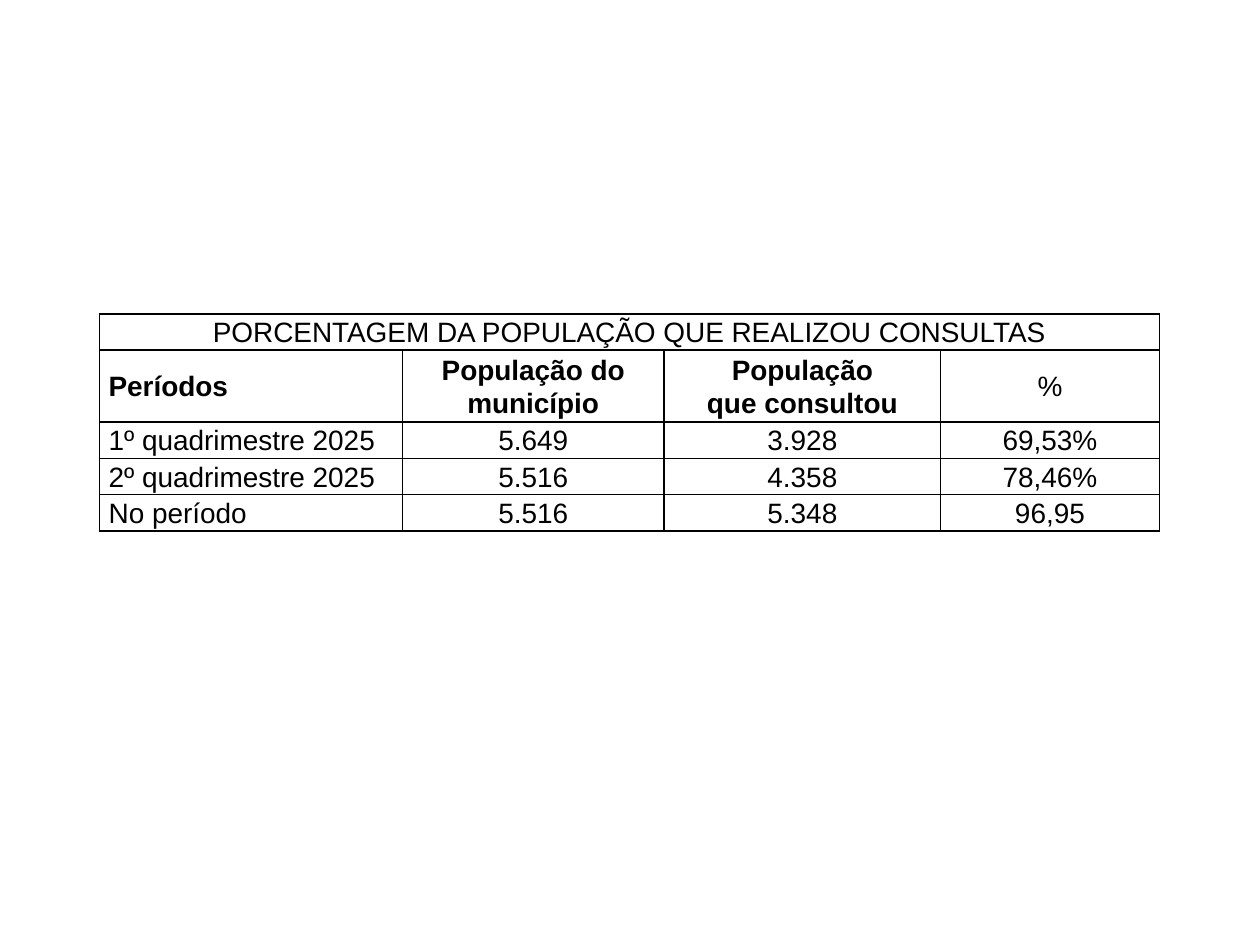
from pptx import Presentation
from pptx.dml.color import RGBColor
from pptx.enum import text
from pptx.oxml import parse_xml
from pptx.oxml.ns import nsdecls
from pptx.util import Cm, Pt

TITLE = "PORCENTAGEM DA POPULAÇÃO QUE REALIZOU CONSULTAS"
HEADER = ["Períodos", "População do município", "População\nque consultou", "%"]
PERIODS = [
    ["1º quadrimestre 2025", "5.649", "3.928", "69,53%"],
    ["2º quadrimestre 2025", "5.516", "4.358", "78,46%"],
    ["No período", "5.516", "5.348", "96,95"],
]
ROWS = [[TITLE, "", "", ""], HEADER, *PERIODS]
COL_WIDTHS = [6.1, 5.28, 5.57, 4.41]
ROW_HEIGHTS = [0.73, 1.45, 0.73, 0.73, 0.73]
LEFT, TOP = 2.01, 6.33
THEME = {"font": "Arial", "size": 16, "ink": "000000", "border": 1, "spacing": 1.07}


def add_borders(cell):
    tcPr = cell._tc.get_or_add_tcPr()
    for side in ("lnL", "lnR", "lnT", "lnB"):
        tcPr.append(parse_xml(
            f'<a:{side} {nsdecls("a")} w="{Pt(THEME["border"])}"><a:solidFill>'
            f'<a:srgbClr val="{THEME["ink"]}"/></a:solidFill></a:{side}>'))


def fill_cell(cell, words, align, bold):
    cell.margin_left = cell.margin_right = Cm(0.18)
    cell.margin_top = cell.margin_bottom = 0
    cell.vertical_anchor = text.MSO_ANCHOR.MIDDLE
    add_borders(cell)
    cell.fill.background()
    cell.text_frame.text = words
    for p in cell.text_frame.paragraphs:
        p.alignment = align
        p.line_spacing = THEME["spacing"]
        p.font.name = THEME["font"]
        p.font.size = Pt(THEME["size"])
        p.font.bold = bold
        p.font.color.rgb = RGBColor.from_string(THEME["ink"])


def main():
    prs = Presentation()
    prs.slide_width, prs.slide_height = Cm(25.4), Cm(19.05)
    s = prs.slides.add_slide(prs.slide_layouts[6])
    table = s.shapes.add_table(
        len(ROWS), len(COL_WIDTHS), Cm(LEFT), Cm(TOP),
        Cm(sum(COL_WIDTHS)), Cm(sum(ROW_HEIGHTS))).table
    table.first_row = table.horz_banding = False
    for column, width in zip(table.columns, COL_WIDTHS):
        column.width = Cm(width)
    for row, height in zip(table.rows, ROW_HEIGHTS):
        row.height = Cm(height)
    for i, row in enumerate(ROWS):
        for j, words in enumerate(row):
            is_label = i > 0 and j == 0
            align = text.PP_ALIGN.LEFT if is_label else text.PP_ALIGN.CENTER
            fill_cell(table.cell(i, j), words, align, row is HEADER and words != "%")
    table.cell(0, 0).merge(table.cell(0, len(COL_WIDTHS) - 1))
    prs.save("out.pptx")


if __name__ == "__main__":
    main()
